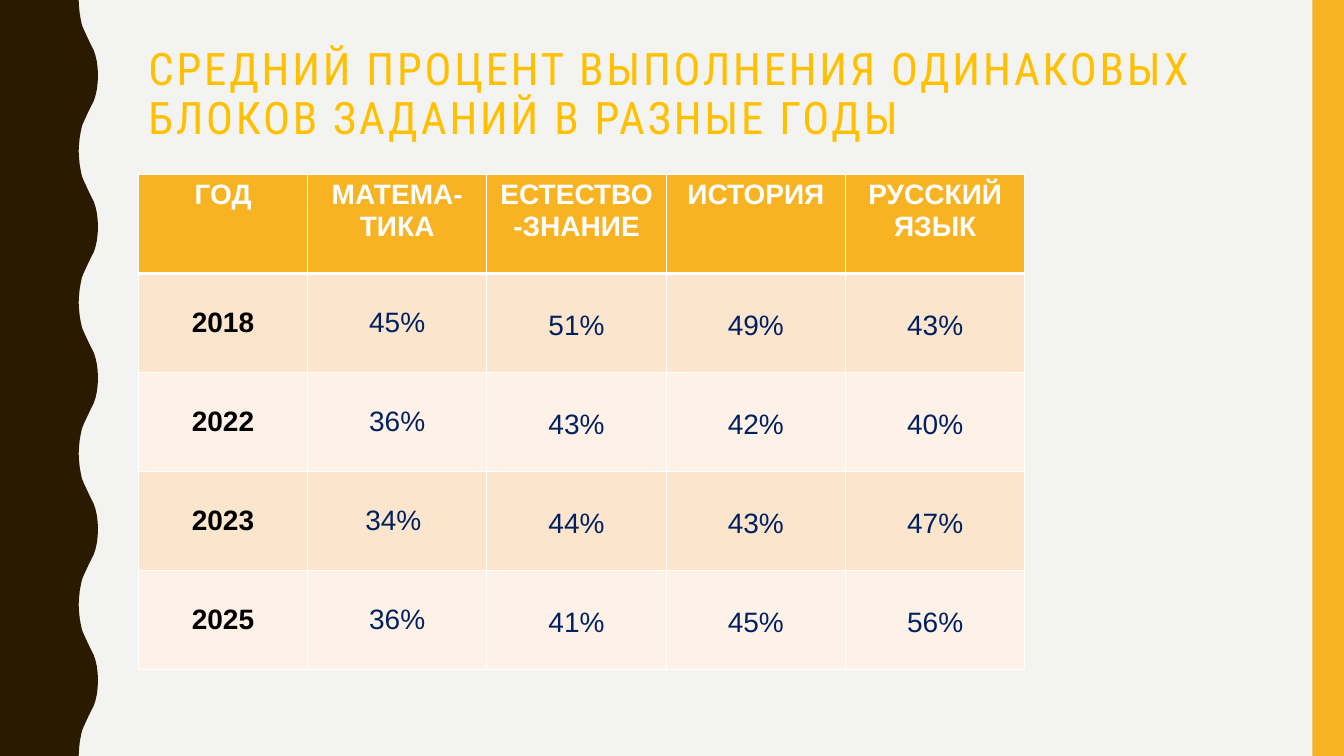
"""Build a slide with a table of average task completion by subject and year."""
import pptx
import pptx.dml.color
import pptx.enum.text
import pptx.oxml
import pptx.oxml.ns
import pptx.util

Pt = pptx.util.Pt

TITLE = "СРЕДНИЙ ПРОЦЕНТ ВЫПОЛНЕНИЯ ОДИНАКОВЫХ БЛОКОВ ЗАДАНИЙ В РАЗНЫЕ ГОДЫ"
ROWS = [
    ("ГОД", "МАТЕМА-ТИКА", "ЕСТЕСТВО-ЗНАНИЕ", "ИСТОРИЯ", "РУССКИЙ ЯЗЫК"),
    ("2018", "45%", "51%", "49%", "43%"),
    ("2022", "36%", "43%", "42%", "40%"),
    ("2023", "34% ", "44%", "43%", "47%"),
    ("2025", "36%", "41%", "45%", "56%"),
]
WIDTH, HEIGHT = 960, 540
TABLE_LEFT, TABLE_TOP = 98.9, 124.7
COLUMN_WIDTHS = [120.8, 128.1, 128.1, 128.1, 128.1]
ROW_HEIGHT = 70.75
BACKGROUND, BROWN, AMBER, GOLD = "F3F3F2", "2A1A00", "F8B323", "FFC000"
WHITE, BLACK, NAVY = "FFFFFF", "000000", "002060"
BANDS = ["FCE5CD", "FEF2E8"]
WAVE_PERIOD, WAVE_COUNT = 108, 5
HALF_WAVE = [
    (56.2, 0), (56.5, 5), (57, 10), (57.8, 14.4), (58.6, 18), (59.8, 21), (61.2, 24), (62.6, 27),
    (64, 30), (65.5, 33), (67, 36), (68.2, 39.6), (69.2, 44), (69.8, 49), (70, 54),
]


def color(value):
    return pptx.dml.color.RGBColor.from_string(value)


def paint(shape, value):
    shape.fill.solid()
    shape.fill.fore_color.rgb = color(value)
    shape.line.fill.background()
    shape.shadow.inherit = False


def add_wave(slide):
    wave = HALF_WAVE + [(x, WAVE_PERIOD - y) for x, y in HALF_WAVE[-2::-1]]
    points = [(x, y + WAVE_PERIOD * i) for i in range(WAVE_COUNT) for x, y in wave]
    builder = slide.shapes.build_freeform(0, 0)
    builder.add_line_segments([(Pt(x), Pt(y)) for x, y in points + [(0, HEIGHT)]])
    paint(builder.convert_to_shape(), BROWN)


def add_title(slide):
    box = slide.shapes.add_textbox(Pt(98.9), Pt(30.2), Pt(801.4), Pt(94.3))
    box.text_frame.word_wrap = True
    paragraph = box.text_frame.paragraphs[0]
    paragraph.line_spacing = 0.9
    run = paragraph.add_run()
    run.text = TITLE
    run.font.name = "Roboto Condensed"
    run.font.size = Pt(32)
    run.font.color.rgb = color(GOLD)
    run.font._element.set("spc", "200")


def set_borders(cell, row):
    properties = cell._tc.get_or_add_tcPr()
    widths = {"L": 1, "R": 1, "T": 3 if row == 1 else 1, "B": 3 if row == 0 else 1}
    for side, width in widths.items():
        properties.append(pptx.oxml.parse_xml(
            f'<a:ln{side} {pptx.oxml.ns.nsdecls("a")} w="{Pt(width)}"><a:solidFill>'
            f'<a:srgbClr val="{WHITE}"/></a:solidFill></a:ln{side}>'))


def fill_cell(cell, text, row, column):
    header, year = row == 0, column == 0
    set_borders(cell, row)
    cell.fill.solid()
    cell.fill.fore_color.rgb = color(AMBER if header else BANDS[(row - 1) % 2])
    if not header:
        cell.vertical_anchor = pptx.enum.text.MSO_ANCHOR.MIDDLE
        if not year:
            cell.margin_left = cell.margin_right = Pt(5)
            cell.margin_top = cell.margin_bottom = Pt(3)
    cell.text = text
    paragraph = cell.text_frame.paragraphs[0]
    paragraph.alignment = pptx.enum.text.PP_ALIGN.CENTER
    if not header and column > 1:
        paragraph.line_spacing = 1.15
    paragraph.font.name = "Arial"
    paragraph.font.size = Pt(20)
    paragraph.font.bold = header or year
    paragraph.font.color.rgb = color(WHITE if header else BLACK if year else NAVY)


def add_results(slide):
    table = slide.shapes.add_table(
        len(ROWS), len(COLUMN_WIDTHS), Pt(TABLE_LEFT), Pt(TABLE_TOP),
        Pt(sum(COLUMN_WIDTHS)), Pt(ROW_HEIGHT * len(ROWS))).table
    for column, width in zip(table.columns, COLUMN_WIDTHS):
        column.width = Pt(width)
    for i, texts in enumerate(ROWS):
        table.rows[i].height = Pt(ROW_HEIGHT)
        for j, text in enumerate(texts):
            fill_cell(table.cell(i, j), text, i, j)


def main():
    presentation = pptx.Presentation()
    presentation.slide_width, presentation.slide_height = Pt(WIDTH), Pt(HEIGHT)
    slide = presentation.slides.add_slide(presentation.slide_layouts[6])
    slide.background.fill.solid()
    slide.background.fill.fore_color.rgb = color(BACKGROUND)
    add_wave(slide)
    stripe = slide.shapes.add_shape(
        pptx.enum.shapes.MSO_SHAPE.RECTANGLE, Pt(937.5), 0, Pt(22.5), Pt(HEIGHT))
    paint(stripe, AMBER)
    add_title(slide)
    add_results(slide)
    presentation.save("out.pptx")


if __name__ == "__main__":
    import pptx.enum.shapes
    main()
